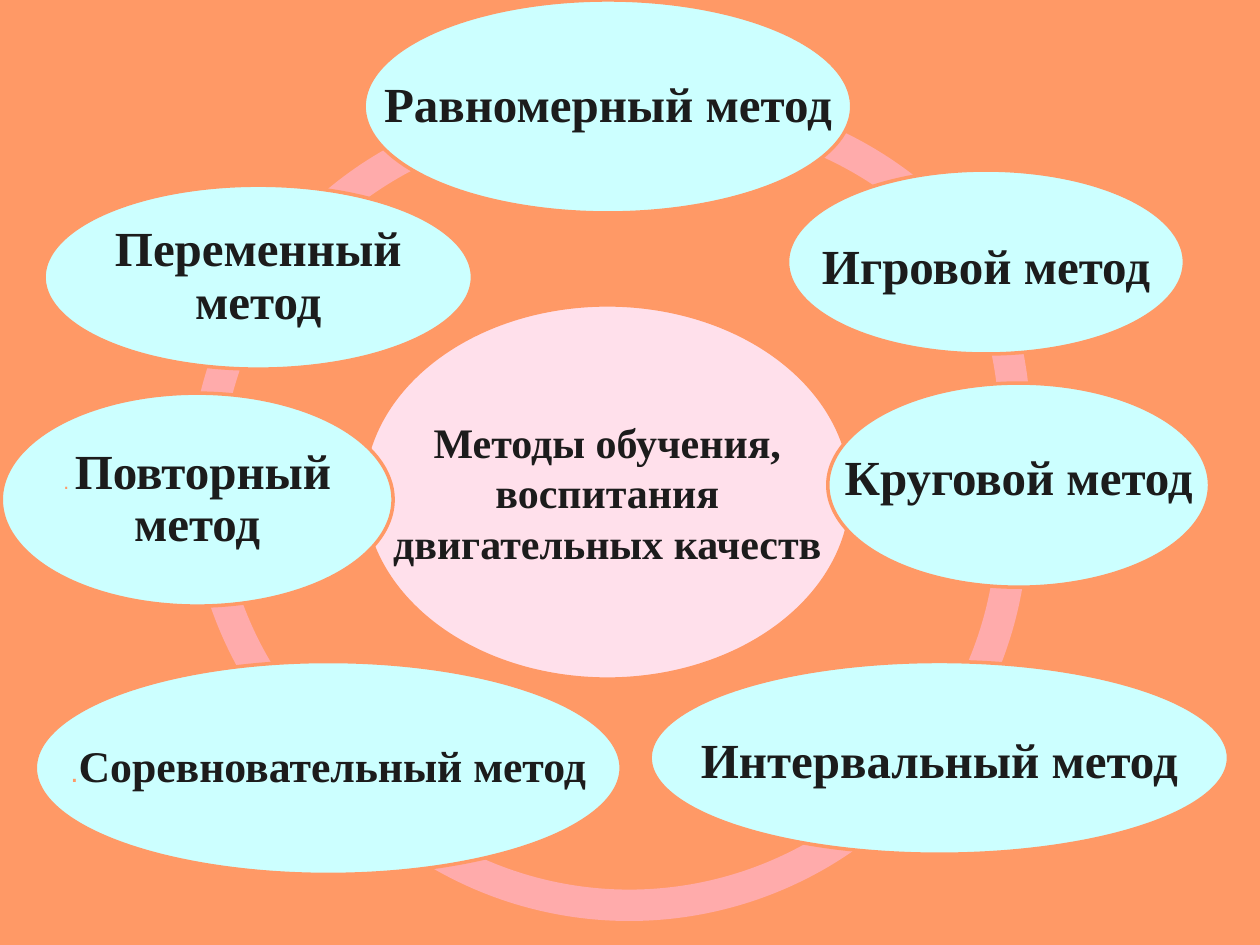
from dataclasses import dataclass

from pptx import Presentation
from pptx.dml.color import RGBColor
from pptx.enum.shapes import MSO_SHAPE
from pptx.enum.text import MSO_ANCHOR, PP_ALIGN
from pptx.util import Inches, Pt


@dataclass(frozen=True)
class Theme:
    background: str = "FF9966"
    ring: str = "FFABAB"
    center: str = "FFE0EB"
    method: str = "CCFFFF"
    text: str = "1C1C1C"
    font: str = "Times New Roman"
    dot_font: str = "Arial"
    center_size: int = 24
    method_size: int = 28
    long_size: int = 25
    outline: int = 2


THEME = Theme()
RING_SIZE = 6.23
RING_THICKNESS = 0.04
INSET = 0.03

# left, top, start angle, end angle
ARCS = [
    (1.48, 0.78, 213.74, 274.33),
    (1.5, 0.75, 178.04, 213.03),
    (1.5, 0.68, 131.18, 176.77),
    (1.88, 1.08, 36.43, 141.71),
    (1.93, 1.02, 354.68, 37.98),
    (1.95, 0.28, 334.45, 8.62),
    (2.23, 0.74, 260.2, 324.31),
]

CENTER = {"text": "Методы обучения, воспитания двигательных качеств",
          "at": (2.88, 2.42, 3.88, 2.97), "fill": THEME.center,
          "size": THEME.center_size, "spacing": 1.0}

METHODS = [
    {"text": "Равномерный метод", "at": (2.89, 0, 3.87, 1.69)},
    {"text": "Игровой метод", "at": (6.25, 1.35, 3.15, 1.46), "shift": 0.05},
    {"text": "Круговой метод", "at": (6.57, 3.04, 3.03, 1.62), "shift": -0.04},
    {"text": "Интервальный метод", "at": (5.16, 5.25, 4.59, 1.53), "shift": 0.04},
    {"text": "Соревновательный метод", "at": (0.28, 5.25, 4.65, 1.69),
     "size": THEME.long_size, "dot": (".", 17)},
    {"text": "Повторный метод", "at": (0.01, 3.12, 3.11, 1.69), "dot": (". ", 12)},
    {"text": "Переменный метод", "at": (0.35, 1.47, 3.4, 1.46)},
]


def color(value):
    return RGBColor.from_string(value)


def add_filled(page, kind, at, fill):
    shape = page.shapes.add_shape(kind, *map(Inches, at))
    shape.shadow.inherit = False
    shape.fill.solid()
    shape.fill.fore_color.rgb = color(fill)
    shape.line.fill.background()
    return shape


def add_arc(page, left, top, start, end):
    arc = add_filled(page, MSO_SHAPE.BLOCK_ARC, (left, top, RING_SIZE, RING_SIZE), THEME.ring)
    for index, angle in enumerate((start, end)):
        arc.adjustments[index] = angle * 60000 / 100000
    arc.adjustments[2] = RING_THICKNESS


def add_span(para, text, size, font, fill, bold):
    span = para.add_run()
    span.text = text
    span.font.size = Pt(size)
    span.font.name = font
    span.font.bold = bold
    span.font.color.rgb = color(fill)


def add_oval(page, text, at, fill=THEME.method, size=THEME.method_size,
             spacing=0.9, shift=0, dot=None):
    oval = add_filled(page, MSO_SHAPE.OVAL, at, fill)
    oval.line.color.rgb = color(THEME.background)
    oval.line.width = Pt(THEME.outline)

    left, top, width, height = at
    box = page.shapes.add_textbox(*map(Inches, (left, top + shift, width, height)))
    frame = box.text_frame
    frame.word_wrap = True
    frame.vertical_anchor = MSO_ANCHOR.MIDDLE
    frame.margin_left = frame.margin_right = Inches(INSET)
    frame.margin_top = frame.margin_bottom = Inches(INSET)
    para = frame.paragraphs[0]
    para.alignment = PP_ALIGN.CENTER
    para.line_spacing = spacing
    if dot:
        add_span(para, *dot, THEME.dot_font, THEME.background, False)
    add_span(para, text, size, THEME.font, THEME.text, True)


def main():
    deck = Presentation()
    deck.slide_width, deck.slide_height = Inches(10), Inches(7.5)
    page = deck.slides.add_slide(deck.slide_layouts[6])
    page.background.fill.solid()
    page.background.fill.fore_color.rgb = color(THEME.background)
    for arc in ARCS:
        add_arc(page, *arc)
    for oval in [CENTER, *METHODS]:
        add_oval(page, **oval)
    deck.save("out.pptx")


if __name__ == "__main__":
    main()
